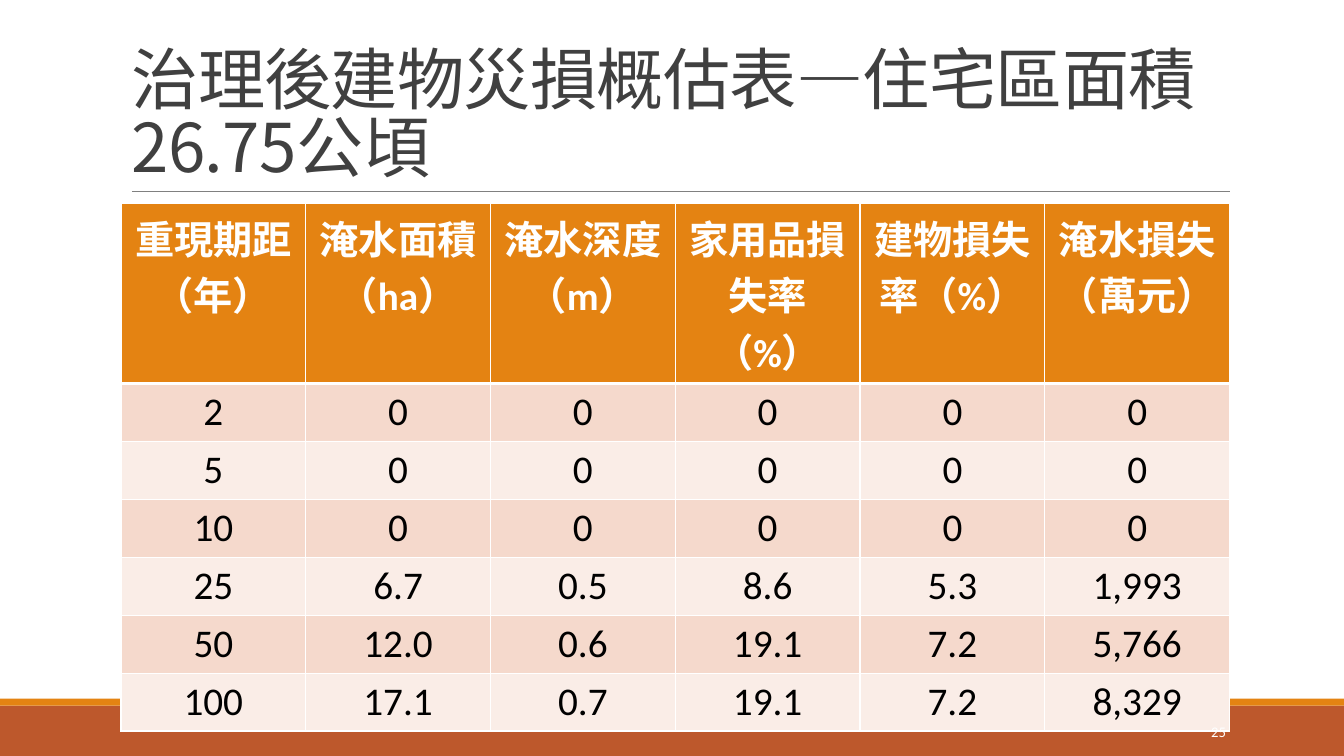
"""Build the slide with the flood loss table for the residential area."""
import lxml.etree
import pptx
import pptx.dml.color
import pptx.enum.shapes
import pptx.enum.text
import pptx.oxml.ns
import pptx.util

Pt = pptx.util.Pt
qn = pptx.oxml.ns.qn
ALIGN = pptx.enum.text.PP_ALIGN
ANCHOR = pptx.enum.text.MSO_ANCHOR


def color(value):
    return pptx.dml.color.RGBColor.from_string(value)


class Deck:
    latin = "Calibri"
    cjk = "Noto Sans CJK SC"
    white = "FFFFFF"
    black = "000000"
    gray = "404040"
    rule = "808080"
    orange = "E48312"
    rust = "BD582C"
    bands = ("F5D9CC", "FAEDE7")

    def __init__(self, prs):
        self.s = prs.slides.add_slide(prs.slide_layouts[6])

    def bar(self, x, y, w, h, fill):
        sp = self.s.shapes.add_shape(
            pptx.enum.shapes.MSO_SHAPE.RECTANGLE, Pt(x), Pt(y), Pt(w), Pt(h))
        sp.shadow.inherit = False
        sp.fill.solid()
        sp.fill.fore_color.rgb = color(fill)
        sp.line.fill.background()

    def line(self, x1, y1, x2, y2):
        sp = self.s.shapes.add_connector(
            pptx.enum.shapes.MSO_CONNECTOR.STRAIGHT, Pt(x1), Pt(y1), Pt(x2), Pt(y2))
        sp.line.color.rgb = color(self.rule)
        sp.line.width = Pt(0.5)
        lxml.etree.SubElement(sp._element.spPr, qn("a:effectLst"))

    def run(self, p, text, size, fill, font, bold=False):
        r = p.add_run()
        r.text = text
        r.font.size = Pt(size)
        r.font.bold = bold
        r.font.name = font
        r.font.color.rgb = color(fill)
        rPr = r._r.get_or_add_rPr()
        lxml.etree.SubElement(rPr, qn("a:ea"), typeface=self.cjk)
        return rPr

    def text(self, x, y, w, h, text, size, fill, font, anchor,
             align=ALIGN.LEFT, spacing=None, tracking=0):
        tf = self.s.shapes.add_textbox(Pt(x), Pt(y), Pt(w), Pt(h)).text_frame
        tf.word_wrap = True
        tf.vertical_anchor = anchor
        p = tf.paragraphs[0]
        p.alignment = align
        p.line_spacing = spacing
        rPr = self.run(p, text, size, fill, font)
        if tracking:
            rPr.set("spc", str(round(tracking * 100)))

    def border(self, cell, side, width):
        tcPr = cell._tc.get_or_add_tcPr()
        ln = lxml.etree.SubElement(tcPr, qn("a:ln" + side), w=str(Pt(width)))
        solid = lxml.etree.SubElement(ln, qn("a:solidFill"))
        lxml.etree.SubElement(solid, qn("a:srgbClr"), val=self.white)

    def cell(self, cell, text, fill, ink, bold, widths):
        for side, width in zip("LRTB", widths):
            self.border(cell, side, width)
        cell.fill.solid()
        cell.fill.fore_color.rgb = color(fill)
        p = cell.text_frame.paragraphs[0]
        p.alignment = ALIGN.CENTER
        self.run(p, text, 28, ink, self.latin, bold)

    def table(self, x, y, w, head_height, row_height, rows):
        h = head_height + row_height * (len(rows) - 1)
        sp = self.s.shapes.add_table(len(rows), len(rows[0]), Pt(x), Pt(y), Pt(w), Pt(h))
        for i, row in enumerate(rows):
            head = i == 0
            sp.table.rows[i].height = Pt(head_height if head else row_height)
            fill = self.orange if head else self.bands[(i - 1) % 2]
            ink = self.white if head else self.black
            widths = (1, 1, 3 if i == 1 else 1, 3 if head else 1)
            for j, text in enumerate(row):
                self.cell(sp.table.cell(i, j), text, fill, ink, head, widths)


def main():
    prs = pptx.Presentation()
    prs.slide_width, prs.slide_height = Pt(960), Pt(540)
    deck = Deck(prs)
    deck.bar(0, 504, 960, 36, deck.rust)
    deck.bar(0, 499, 960, 5, deck.orange)
    deck.line(94.3, 136.8, 878.8, 136.8)
    deck.text(86.9, 22.6, 792, 114.2, "治理後建物災損概估表—住宅區面積26.75公頃", 48,
              deck.gray, deck.cjk, ANCHOR.BOTTOM, spacing=0.85, tracking=-0.5)
    deck.table(86.4, 145.5, 792, 128.4, 41.4, [
        ["重現期距（年）", "淹水面積（ha）", "淹水深度（m）",
         "家用品損失率（%）", "建物損失率（%）", "淹水損失（萬元）"],
        ["2", "0", "0", "0", "0", "0"],
        ["5", "0", "0", "0", "0", "0"],
        ["10", "0", "0", "0", "0", "0"],
        ["25", "6.7", "0.5", "8.6", "5.3", "1,993"],
        ["50", "12.0", "0.6", "19.1", "7.2", "5,766"],
        ["100", "17.1", "0.7", "19.1", "7.2", "8,329"],
    ])
    deck.text(779.8, 508.5, 103, 28.8, "25", 10.5, deck.white, deck.latin,
              ANCHOR.MIDDLE, align=ALIGN.RIGHT)
    prs.save("out.pptx")


if __name__ == "__main__":
    main()
